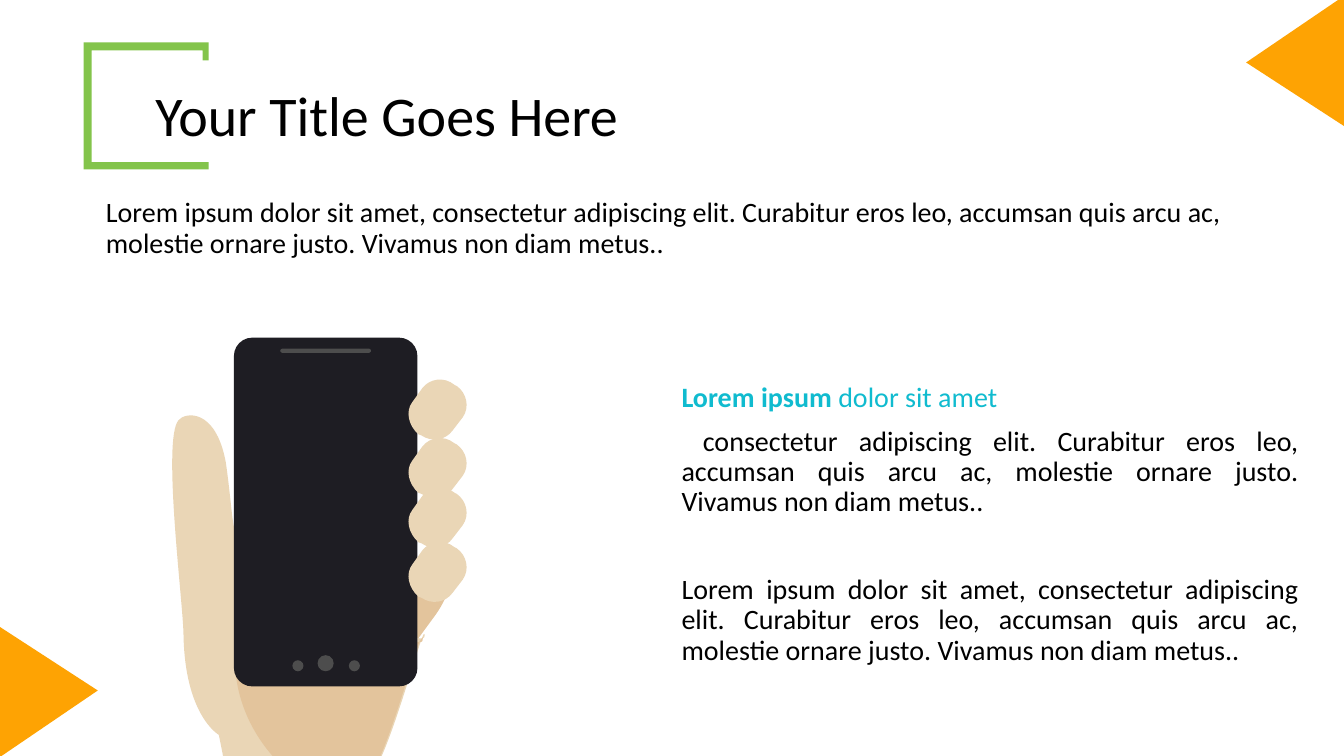
from pptx import Presentation
from pptx.dml.color import RGBColor
from pptx.enum.shapes import MSO_SHAPE
from pptx.enum.text import MSO_ANCHOR, MSO_AUTO_SIZE, PP_ALIGN
from pptx.util import Inches, Pt
from lxml.etree import SubElement
from pptx.oxml.ns import qn

COLORS = {
    "skin": "EAD6B6", "shade": "E3C49C", "phone": "1E1D23", "button": "4D4D4D",
    "green": "83C44B", "orange": "FEA303", "teal": "10BBCF", "black": "000000",
}


def paint(shape, color):
    shape.fill.solid()
    shape.fill.fore_color.rgb = RGBColor.from_string(COLORS[color])
    shape.line.fill.background()
    shape.shadow.inherit = False


def outline(shapes, parts, color, drop=0):
    spots = [(Inches(part[i]), Inches(part[i + 1] + drop))
             for part in parts for i in range(0, len(part), 2)]
    builder = shapes.build_freeform(*spots[0], scale=1.0)
    builder.add_line_segments(spots[1:], close=True)
    shape = builder.convert_to_shape()
    lines = iter(list(shape._element.iter(qn("a:lnTo"))))
    for part in parts[1:]:
        line = next(lines)
        if len(part) == 6:
            line.tag = qn("a:cubicBezTo")
            for _ in range(2):
                extra = next(lines)
                line.append(extra[0])
                extra.getparent().remove(extra)
    paint(shape, color)


deck = Presentation()
deck.slide_width = Inches(13.33)
deck.slide_height = Inches(7.5)
slide = deck.slides.add_slide(deck.slide_layouts[3])
title, intro, detail = slide.placeholders

hand = slide.shapes.add_group_shape().shapes
base = [(4.1, 6.4), (3.95, 6.61, 3.74, 6.73, 3.63, 6.66), (3.61, 6.63),
        (3.5, 6.56, 3.55, 6.33, 3.7, 6.12), (3.92, 5.81),
        (4.07, 5.6, 4.28, 5.49, 4.39, 5.57), (4.41, 5.58),
        (4.52, 5.65, 4.47, 5.89, 4.32, 6.1)]
thumb = [(2.26, 7.92), (2.28, 7.79, 2.17, 7.29, 2.17, 7.29),
         (2.17, 7.29, 1.83, 7.1, 1.82, 6.28),
         (1.81, 5.93, 1.61, 4.36, 1.77, 4.17),
         (1.83, 4.09, 2.14, 4.04, 2.24, 4.59),
         (2.32, 5.14, 2.29, 5.38, 2.46, 5.49),
         (2.62, 5.6, 4.2, 6.46, 4.21, 6.32),
         (4.23, 6.07, 3.92, 7.31, 3.71, 7.65),
         (3.66, 7.72, 2.91, 7.9, 2.7, 7.96),
         (2.47, 8.02, 2.2, 8.27, 2.26, 7.92)]
crease = [(4.16, 6.37), (4.17, 6.37, 4.19, 6.37, 4.19, 6.36),
          (4.2, 6.31, 4.19, 6.32, 4.16, 6.37)]
palm = [(2.63, 5.65), (2.44, 5.9, 2.33, 6.2, 2.33, 6.53),
        (2.33, 7.08, 2.65, 7.58, 3.16, 7.87),
        (3.41, 7.81, 3.66, 7.74, 3.68, 7.69),
        (3.85, 7.42, 4.08, 6.58, 4.16, 6.37),
        (3.99, 6.38, 3.06, 5.88, 2.63, 5.65)]
for parts, color in [(base, "shade"), (thumb, "skin"),
                     (crease, "shade"), (palm, "shade")]:
    outline(hand, parts, color)

for kind, box, color, curve in [
    (MSO_SHAPE.ROUNDED_RECTANGLE, (2.32, 3.35, 1.82, 3.46), "phone", 0.1),
    (MSO_SHAPE.OVAL, (3.15, 6.5, 0.16, 0.16), "button", None),
    (MSO_SHAPE.OVAL, (2.9, 6.55, 0.11, 0.11), "button", None),
    (MSO_SHAPE.OVAL, (3.46, 6.55, 0.11, 0.11), "button", None),
    (MSO_SHAPE.ROUNDED_RECTANGLE, (2.78, 3.46, 0.9, 0.04), "button", 0.5),
]:
    shape = hand.add_shape(kind, *map(Inches, box))
    if curve:
        shape.adjustments[0] = curve
    paint(shape, color)

finger = [(4.49, 4.27), (4.42, 4.37, 4.28, 4.39, 4.18, 4.32), (4.15, 4.31),
          (4.05, 4.22, 4.02, 4.08, 4.09, 3.99), (4.19, 3.85),
          (4.26, 3.76, 4.4, 3.73, 4.51, 3.82), (4.53, 3.83),
          (4.63, 3.9, 4.66, 4.04, 4.59, 4.14)]
for drop in (0, 0.58, 1.07, 1.61):
    outline(hand, finger, "skin", drop)

bracket = [(2.07, 0.6), (2.07, 0.42), (0.83, 0.42), (0.83, 1.68), (2.07, 1.68),
           (2.07, 1.61), (0.91, 1.61), (0.91, 0.5), (2.01, 0.5), (2.01, 0.6)]
outline(slide.shapes, bracket, "green")
outline(slide.shapes, [(0, 6.22), (0.97, 6.85), (0, 7.51)], "orange")
outline(slide.shapes, [(13.33, 1.25), (12.36, 0.62), (13.33, -0.04)], "orange")

lorem = "Lorem ipsum dolor sit amet, "
rest = ("consectetur adipiscing elit. Curabitur eros leo, accumsan quis arcu ac, "
        "molestie ornare justo. Vivamus non diam metus..")
left, full = PP_ALIGN.LEFT, PP_ALIGN.JUSTIFY
for holder, box, size, align, lines in [
    (title, (1.44, 0.75, 5.22, 0.77), 40, left,
     [(["Your Title Goes Here"], "black", 0)]),
    (intro, (0.95, 1.92, 12.03, 1.05), 20, left, [([lorem + rest], "black", 10)]),
    (detail, (6.66, 3.75, 6.32, 2.74), 20, full,
     [(["Lorem ipsum ", "dolor sit amet"], "teal", 10),
      ([" " + rest], "black", 10), ([lorem + rest], "black", 41)]),
]:
    holder.left, holder.top, holder.width, holder.height = map(Inches, box)
    frame = holder.text_frame
    frame.word_wrap = True
    frame.auto_size = MSO_AUTO_SIZE.NONE
    frame.vertical_anchor = MSO_ANCHOR.TOP
    for row, (texts, color, space) in enumerate(lines):
        para = frame.add_paragraph() if row else frame.paragraphs[0]
        para.alignment = align
        para.line_spacing = 1.0 if holder is title else 0.9
        para.space_before = Pt(space)
        para.font.name = "Calibri"
        para.font.size = Pt(size)
        para.font.color.rgb = RGBColor.from_string(COLORS[color])
        for text in texts:
            run = para.add_run()
            run.text = text
        if len(texts) > 1:
            para.runs[0].font.bold = True
        if holder is not title:
            props = para._p.get_or_add_pPr()
            props.set("marL", "0")
            props.set("indent", "0")
            mark = SubElement(props, qn("a:buNone"))
            props.find(qn("a:defRPr")).addprevious(mark)

deck.save("out.pptx")
